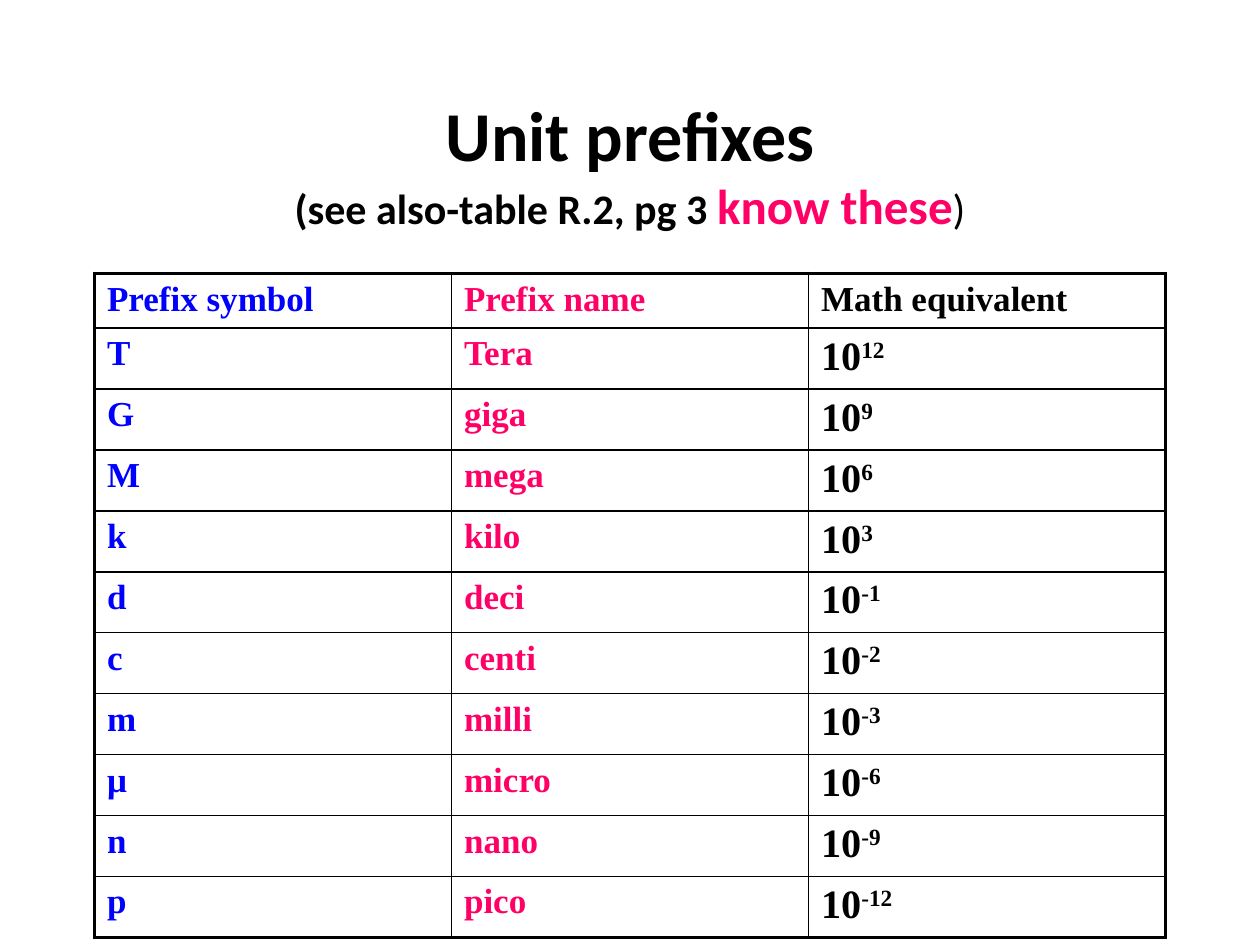
from lxml.etree import SubElement as Sub
from pptx import Presentation
from pptx.dml.color import RGBColor
from pptx.enum.text import MSO_ANCHOR as Anchor, PP_ALIGN as Align
from pptx.oxml.ns import qn
from pptx.util import Inches, Pt

BLACK, BLUE, PINK = "000000", "0000FF", "FF0066"
SANS, SERIF = "Calibri", "Times New Roman"
THIN, THICK = 1, 2.25

# Each line of the title is a list of runs: text, size, colour, bold
TITLE = [
    [("Unit prefixes", 40, BLACK, True)],
    [("(see also-table R.2, pg 3 ", 24, BLACK, True),
     ("know these", 28, PINK, True),
     (")", 24, BLACK, False)],
]
HEADS = ["Prefix symbol", "Prefix name", "Math equivalent"]
COLORS = [BLUE, PINK, BLACK]
# Symbol, name, power of ten
UNITS = [
    ("T", "Tera", "12"),
    ("G", "giga", "9"),
    ("M", "mega", "6"),
    ("k", "kilo", "3"),
    ("d", "deci", "-1"),
    ("c", "centi", "-2"),
    ("m", "milli", "-3"),
    ("μ", "micro", "-6"),
    ("n", "nano", "-9"),
    ("p", "pico", "-12"),
]
LEFT, WIDTH = 0.75, 8.5
HEAD_H, ROW_H = 0.42, 0.44


def add_run(para, text, size, color, font, bold=True):
    run = para.add_run()
    run.text = text
    run.font.name, run.font.size, run.font.bold = font, Pt(size), bold
    run.font.color.rgb = RGBColor.from_string(color)
    return run


def add_title(slide):
    box = slide.shapes.add_textbox(
        Inches(LEFT), Inches(0.67), Inches(WIDTH), Inches(1.25))
    frame = box.text_frame
    frame.word_wrap = True
    frame.vertical_anchor = Anchor.MIDDLE
    para = frame.paragraphs[0]
    para.alignment = Align.CENTER
    for i, line in enumerate(TITLE):
        if i:
            para.add_line_break()
        for text, size, color, bold in line:
            add_run(para, text, size, color, SANS, bold)


def set_edges(cell, widths):
    """Draw the borders of a cell; widths are in points, keyed by side."""
    props = cell._tc.get_or_add_tcPr()
    for i, (side, width) in enumerate(widths.items()):
        line = props.makeelement(qn("a:ln" + side), {"w": str(Pt(width))})
        fill = Sub(line, qn("a:solidFill"))
        Sub(fill, qn("a:srgbClr"), val=BLACK)
        props.insert(i, line)


def space_before(para, percent):
    space = Sub(para._p.get_or_add_pPr(), qn("a:spcBef"))
    Sub(space, qn("a:spcPct"), val=str(percent * 1000))


def add_units(slide):
    rows, cols = len(UNITS) + 1, len(HEADS)
    table = slide.shapes.add_table(
        rows, cols, Inches(LEFT), Inches(2.17), Inches(WIDTH),
        Inches(HEAD_H + ROW_H * len(UNITS))).table
    table.first_row = table.horz_banding = False
    for r, texts in enumerate([HEADS, *UNITS]):
        table.rows[r].height = Inches(ROW_H if r else HEAD_H)
        for c, (text, color) in enumerate(zip(texts, COLORS)):
            cell = table.cell(r, c)
            cell.fill.background()
            outer = {"L": c == 0, "R": c == cols - 1,
                     "T": r == 0, "B": r == rows - 1}
            set_edges(cell, {side: THICK if edge else THIN
                             for side, edge in outer.items()})
            para = cell.text_frame.paragraphs[0]
            space_before(para, 20)
            if r and c == cols - 1:
                add_run(para, "10", 23, color, SERIF)
                power = add_run(para, text, 23, color, SERIF)
                power._r.get_or_add_rPr().set("baseline", "30000")
            else:
                add_run(para, text, 20, color, SERIF)


def main():
    deck = Presentation()
    deck.slide_width, deck.slide_height = Inches(10), Inches(7.5)
    slide = deck.slides.add_slide(deck.slide_layouts[6])
    add_title(slide)
    add_units(slide)
    deck.save("out.pptx")


if __name__ == "__main__":
    main()
